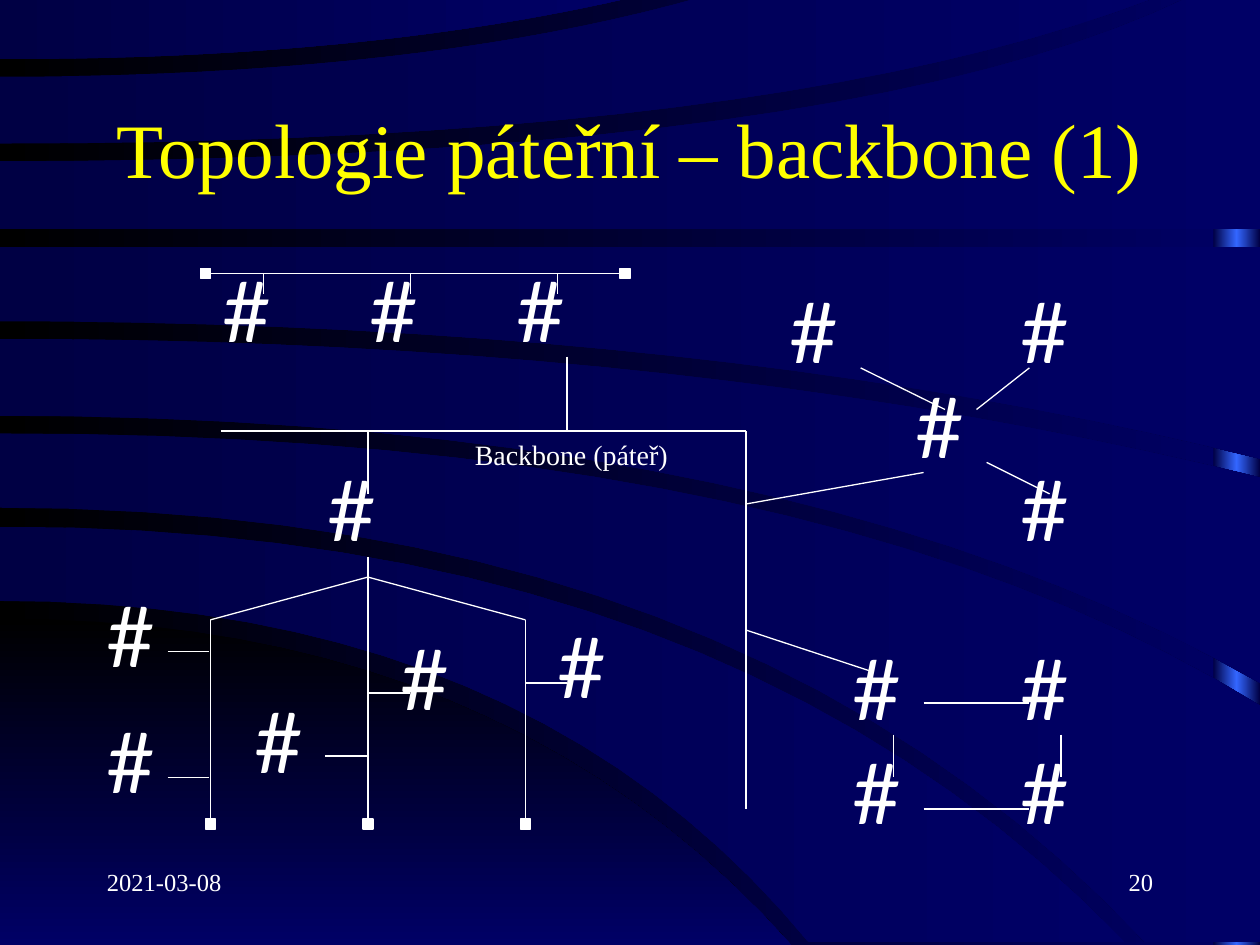
from copy import deepcopy
from pptx import Presentation
from pptx import util as u
from pptx.dml.color import RGBColor
from pptx.enum import shapes, text
from pptx.oxml import parse_xml
from pptx.oxml.ns import nsdecls, qn

SERIF = "Times New Roman"
WHITE, YELLOW = "FFFFFF", "FFFF00"
BLACK, DARK, NAVY, BLUE = "000000", "000044", "000066", "3366FF"

# Background bands: upper and lower edge, each as start y, bend x, end x, end y
HILL = ((4.91, 3.98, 6.28, 7.5), (7.5, 3, 6.28, 7.5))
BANDS = [
    ((4.18, 5.75, 8.93, 7.48), (4.77, 4.19, 6.42, 7.48)),
    ((3.44, 6.5, 10, 5.6), (4.03, 5.87, 9.09, 7.48)),
    ((2.69, 5.54, 10, 3.79), (3.3, 6.3, 10, 5.42)),
    ((1.96, 5, 10, 1.96), (2.55, 5.64, 10, 3.64)),
    ((1.28, 6.73, 9.43, -0.02), (1.82, 5, 10, 1.82)),
    ((0.61, 3.34, 5.56, -0.02), (1.14, 6.15, 9.17, -0.02)),
    ((-0.02, 2.5, 5.01, -0.02), (0.47, 2.9, 5.01, -0.02)),
]

# Tree: trunk x and top, then hosts and side links
TRUNKS = [(1.67, 4.92), (2.92, 4.42), (4.17, 4.92)]
LEAVES = [(0.75, 4.58), (0.75, 5.58), (1.92, 5.42), (3.08, 4.92), (4.33, 4.83)]
TWIGS = [(1.33, 5.17), (1.33, 6.17), (2.58, 6), (2.92, 5.5), (4.17, 5.42)]

# Star: hosts and links
STAR = [(7.17, 2.92), (6.17, 2.17), (8, 2.17), (8, 3.58)]
RAYS = [(7.75, 3.25, 8.17, 2.92), (6.83, 2.92, 7.5, 3.25), (7.83, 3.67, 8.33, 3.92)]

# Links from the networks to the backbone
FEEDS = [(4.5, 2.83, 4.5, 3.42), (2.92, 3.42, 2.92, 3.92),
         (5.92, 4, 7.33, 3.75), (6.92, 5.33, 5.92, 5)]


def rgb(code):
    return RGBColor.from_string(code)


def grade(fill, root, tones, angle=0):
    fill.gradient()
    fill.gradient_angle = angle
    first = next(root.iter(qn("a:gs")))
    for _ in tones[2:]:
        first.addnext(deepcopy(first))
    for i, (stop, tone) in enumerate(zip(fill.gradient_stops, tones)):
        stop.position = i / (len(tones) - 1)
        stop.color.rgb = rgb(tone)


def curve(start, bend, x, y, steps=20):
    """Points of an arc that leaves the left border level."""
    pts = []
    for i in range(steps + 1):
        t = i / steps
        pts.append((2 * t * (1 - t) * bend + t * t * x, start + t * t * (y - start)))
    return pts


def band(slide, edges, tones, angle=0):
    top, low = (curve(*edge) for edge in edges)
    corner = (max(top[-1][0], low[-1][0]), min(top[-1], low[-1])[1])
    pts = [(u.Inches(x), u.Inches(y)) for x, y in top + [corner] + low[::-1]]
    pen = slide.shapes.build_freeform(*pts[0])
    pen.add_line_segments(pts[1:], close=True)
    shape = pen.convert_to_shape()
    shape.shadow.inherit = False
    shape.line.fill.background()
    grade(shape.fill, shape._element, tones, angle)


def rect(slide, *box):
    shape = slide.shapes.add_shape(shapes.MSO_SHAPE.RECTANGLE, *map(u.Inches, box))
    shape.shadow.inherit = False
    return shape


def knob(slide, x, y):
    """Terminator square at the end of a bus."""
    shape = rect(slide, x, y, 0.08, 0.08)
    shape.fill.solid()
    shape.fill.fore_color.rgb = rgb(WHITE)
    shape.line.color.rgb = rgb(WHITE)
    shape.line.width = u.Pt(0.75)
    return shape


def link(slide, ends, width=0.75):
    line = slide.shapes.add_connector(shapes.MSO_CONNECTOR.STRAIGHT, *map(u.Inches, ends))
    line.line.color.rgb = rgb(WHITE)
    line.line.width = u.Pt(width)
    line._element.spPr.append(parse_xml(f"<a:effectLst {nsdecls('a')}/>"))
    return line


def label(slide, box, words, size, font=SERIF, tone=WHITE, align="LEFT", fit=False):
    frame = slide.shapes.add_textbox(*map(u.Inches, box)).text_frame
    frame.text = words
    frame.word_wrap = not fit
    if fit:
        frame.auto_size = text.MSO_AUTO_SIZE.SHAPE_TO_FIT_TEXT
    para = frame.paragraphs[0]
    para.alignment = getattr(text.PP_ALIGN, align)
    style = para.runs[0].font
    style.size, style.name, style.color.rgb = u.Pt(size), font, rgb(tone)
    return frame


def host(slide, x, y):
    label(slide, (x, y, 0.87, 0.9), "#", 48, "Lato", fit=True)


def main():
    deck = Presentation()
    deck.slide_width, deck.slide_height = u.Inches(10), u.Inches(7.5)
    slide = deck.slides.add_slide(deck.slide_layouts[6])

    # Background
    grade(slide.background.fill, slide._element, [BLACK, NAVY])
    side = rect(slide, 9.63, 0, 0.37, 7.5)
    side.line.fill.background()
    grade(side.fill, side._element, [DARK, BLUE, DARK])
    band(slide, HILL, [BLACK, NAVY], 270)
    for edges in BANDS:
        band(slide, edges, [DARK, NAVY])

    # Title and footer
    label(slide, (0.75, 6.83, 2.08, 0.5), "2021-03-08", 14)
    label(slide, (7.17, 6.83, 2.08, 0.5), "20", 14, align="RIGHT")
    title = label(slide, (0.75, 0.42, 8.5, 1.5), "Topologie páteřní – backbone (1)",
                  44, tone=YELLOW, align="CENTER")
    title.vertical_anchor = text.MSO_ANCHOR.MIDDLE

    # Hub and hosts of the tree and the star
    for spot in [(2.5, 3.58)] + LEAVES + STAR:
        host(slide, *spot)
    for ends in RAYS + FEEDS:
        link(slide, ends)

    # Top bus with its hosts
    bus = link(slide, (1.58, 2.17, 4.92, 2.17))
    bus.begin_connect(knob(slide, 1.59, 2.13), 1)
    bus.end_connect(knob(slide, 4.92, 2.13), 1)
    for i in range(3):
        x = 1.67 + i * 1.167
        host(slide, x, 2)
        link(slide, (x + 0.42, 2.17, x + 0.42, 2.33))

    # Tree trunks, branches and twigs
    for x, top in TRUNKS:
        link(slide, (x, top, x, 6.58)).end_connect(knob(slide, x - 0.04, 6.5), 2)
        if x != 2.92:
            link(slide, (2.92, 4.58, x, top))
    for x, y in TWIGS:
        link(slide, (x, y, x + 0.33, y))

    # Ring
    for x in (6.67, 8):
        for y in (5, 5.83):
            host(slide, x, y)
        link(slide, (x + 0.42, 5.83, x + 0.42, 6.17))
    for y in (5.58, 6.42):
        link(slide, (7.33, y, 8.17, y))

    # Backbone
    link(slide, (1.75, 3.42, 5.92, 3.42), 1.5)
    link(slide, (5.92, 3.42, 5.92, 6.42), 1.5)
    label(slide, (3.67, 3.42, 1.74, 0.37), "Backbone (páteř)", 16, fit=True)

    deck.save("out.pptx")


if __name__ == "__main__":
    main()
